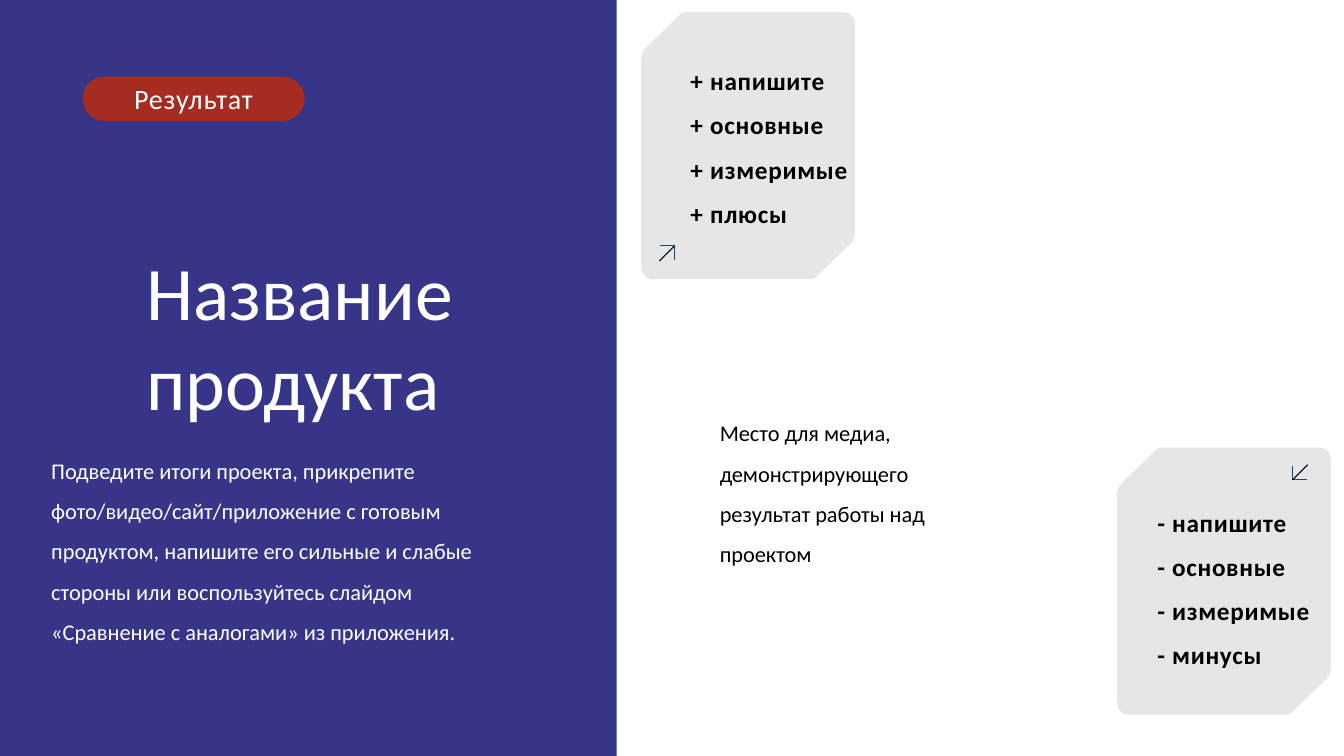
from lxml import etree
from pptx import Presentation
from pptx.dml.color import RGBColor
from pptx.enum.shapes import MSO_CONNECTOR, MSO_SHAPE
from pptx.enum.text import MSO_ANCHOR, MSO_AUTO_SIZE, PP_ALIGN
from pptx.oxml.ns import qn
from pptx.util import Inches, Pt

ROUNDED = MSO_SHAPE.ROUNDED_RECTANGLE
STRAIGHT = MSO_CONNECTOR.STRAIGHT
MIDDLE, TOP = MSO_ANCHOR.MIDDLE, MSO_ANCHOR.TOP
NO_AUTO_SIZE = MSO_AUTO_SIZE.NONE
LEFT, CENTER = PP_ALIGN.LEFT, PP_ALIGN.CENTER

INDIGO = RGBColor(0x37, 0x35, 0x88)
BRICK = RGBColor(0xA6, 0x2B, 0x21)
PALE_GRAY = RGBColor(0xE6, 0xE6, 0xE6)
SLATE = RGBColor(0x28, 0x44, 0x5D)
WHITE = RGBColor(0xFF, 0xFF, 0xFF)
BLACK = RGBColor(0x00, 0x00, 0x00)

FONT = "Calibri"
TITLE_ONLY = 5
CARD_WIDTH, CARD_HEIGHT = 2.12, 2.65
CURVE_STEPS = 6
HALF_CARD_CURVES = [
    [(2.12, 2.19), (2.12, 2.22), (2.11, 2.25), (2.09, 2.28)],
    [(1.75, 2.61), (1.73, 2.64), (1.70, 2.65), (1.67, 2.65)],
    [(0.12, 2.65), (0.05, 2.65), (0, 2.60), (0, 2.53)],
]
DESCRIPTION = (
    "Подведите итоги проекта, прикрепите фото/видео/сайт/приложение с готовым "
    "продуктом, напишите его сильные и слабые стороны или воспользуйтесь слайдом "
    "«Сравнение с аналогами» из приложения."
)
MEDIA_NOTE = "Место для медиа, демонстрирующего результат работы над проектом"


def write_text(shape, lines, size, color, bold=False, align=LEFT, anchor=TOP,
               line_spacing=None, space_before=None, tracking=None):
    """Fill a shape with paragraphs in one common style."""
    frame = shape.text_frame
    frame.text = "\n".join(lines)
    frame.word_wrap = True
    frame.auto_size = NO_AUTO_SIZE
    frame.vertical_anchor = anchor
    for paragraph in frame.paragraphs:
        paragraph.alignment = align
        paragraph.line_spacing = line_spacing
        paragraph.space_before = space_before
        for run in paragraph.runs:
            run.font.name = FONT
            run.font.size = Pt(size)
            run.font.bold = bold
            run.font.color.rgb = color
            if tracking:
                run._r.get_or_add_rPr().set("spc", str(int(tracking * 100)))


def add_text(slide, left, top, width, height, lines, size, color, **style):
    """Add a text box."""
    box = slide.shapes.add_textbox(Inches(left), Inches(top), Inches(width), Inches(height))
    write_text(box, lines, size, color, space_before=Pt(10), **style)


def add_rounded(slide, left, top, width, height, adjustment, color):
    """Add a filled rounded rectangle without outline."""
    shape = slide.shapes.add_shape(
        ROUNDED, Inches(left), Inches(top), Inches(width), Inches(height))
    shape.adjustments[0] = adjustment
    shape.shadow.inherit = False
    shape.fill.solid()
    shape.fill.fore_color.rgb = color
    shape.line.fill.background()
    return shape


def add_outline(shapes, points, close):
    """Draw a path through points given in inches."""
    corners = [(Inches(x), Inches(y)) for x, y in points]
    builder = shapes.build_freeform(*corners[0], scale=1.0)
    builder.add_line_segments(corners[1:], close=close)
    shape = builder.convert_to_shape()
    shape.shadow.inherit = False
    return shape


def curve_points(start, first, second, end):
    """Sample a cubic curve."""
    points = []
    for step in range(CURVE_STEPS + 1):
        t = step / CURVE_STEPS
        weights = ((1 - t) ** 3, 3 * t * (1 - t) ** 2, 3 * t * t * (1 - t), t ** 3)
        points.append(tuple(
            sum(weight * value for weight, value in zip(weights, values))
            for values in zip(start, first, second, end)))
    return points


def add_card(slide, left, top):
    """Add a card with two cut corners, symmetric under a half turn."""
    half = [point for curve in HALF_CARD_CURVES for point in curve_points(*curve)]
    outline = half + [(CARD_WIDTH - x, CARD_HEIGHT - y) for x, y in half]
    card = add_outline(slide.shapes, [(left + x, top + y) for x, y in outline], True)
    card.fill.solid()
    card.fill.fore_color.rgb = PALE_GRAY
    card.line.fill.background()


def add_arrow(slide, tip_x, tip_y, direction):
    """Add a diagonal arrow: direction 1 points up right, -1 down left."""
    shapes = slide.shapes.add_group_shape().shapes
    arm = 0.14 * direction
    head = add_outline(
        shapes, [(tip_x - arm, tip_y), (tip_x, tip_y), (tip_x, tip_y + arm)], False)
    head.fill.background()
    head.line.color.rgb = SLATE
    head.line.width = Pt(0.75)
    reach = 0.15 * direction
    shaft = shapes.add_connector(
        STRAIGHT, Inches(tip_x - reach), Inches(tip_y + reach), Inches(tip_x), Inches(tip_y))
    shaft.line.color.rgb = BLACK
    shaft.line.width = Pt(0.75)
    etree.SubElement(shaft.element.spPr, qn("a:effectLst"))


def place_title(slide):
    """Position and format the slide title."""
    title = slide.shapes.title
    title.left, title.top = Inches(1.35), Inches(1.89)
    title.width, title.height = Inches(4.45), Inches(2.87)
    write_text(title, ["Название", "продукта"], 54, WHITE, anchor=MIDDLE)


def main():
    """Build the project result slide."""
    presentation = Presentation()
    presentation.slide_width, presentation.slide_height = Inches(13.33), Inches(7.5)
    slide = presentation.slides.add_slide(presentation.slide_layouts[TITLE_ONLY])

    panel = add_rounded(slide, -1.79, 0.18, 9.36, 6.45, 0.092, INDIGO)
    panel.rotation = 90
    slide.shapes.title.element.addprevious(panel.element)
    place_title(slide)

    badge = add_rounded(slide, 0.82, 0.76, 2.2, 0.44, 0.5, BRICK)
    write_text(badge, ["Результат"], 20, WHITE, align=CENTER, anchor=MIDDLE, tracking=0.5)

    add_text(slide, 0.41, 4.35, 4.84, 2.9, [DESCRIPTION], 16, WHITE, line_spacing=1.5)
    add_text(slide, 7.04, 3.98, 2.49, 2, [MEDIA_NOTE], 16, BLACK, line_spacing=1.5)

    cards = [
        ((6.36, 0.12), (6.75, 0.6), (6.69, 2.44), 1, "+", "плюсы"),
        ((11.08, 4.44), (11.38, 4.98), (12.82, 4.76), -1, "-", "минусы"),
    ]
    for corner, text_corner, tip, direction, sign, last_word in cards:
        add_card(slide, *corner)
        add_arrow(slide, *tip, direction)
        lines = [f"{sign} {word}" for word in ("напишите", "основные", "измеримые", last_word)]
        add_text(slide, *text_corner, 1.79, 1.58, lines, 18, BLACK, bold=True, tracking=0.5)

    presentation.save("out.pptx")


if __name__ == "__main__":
    main()
